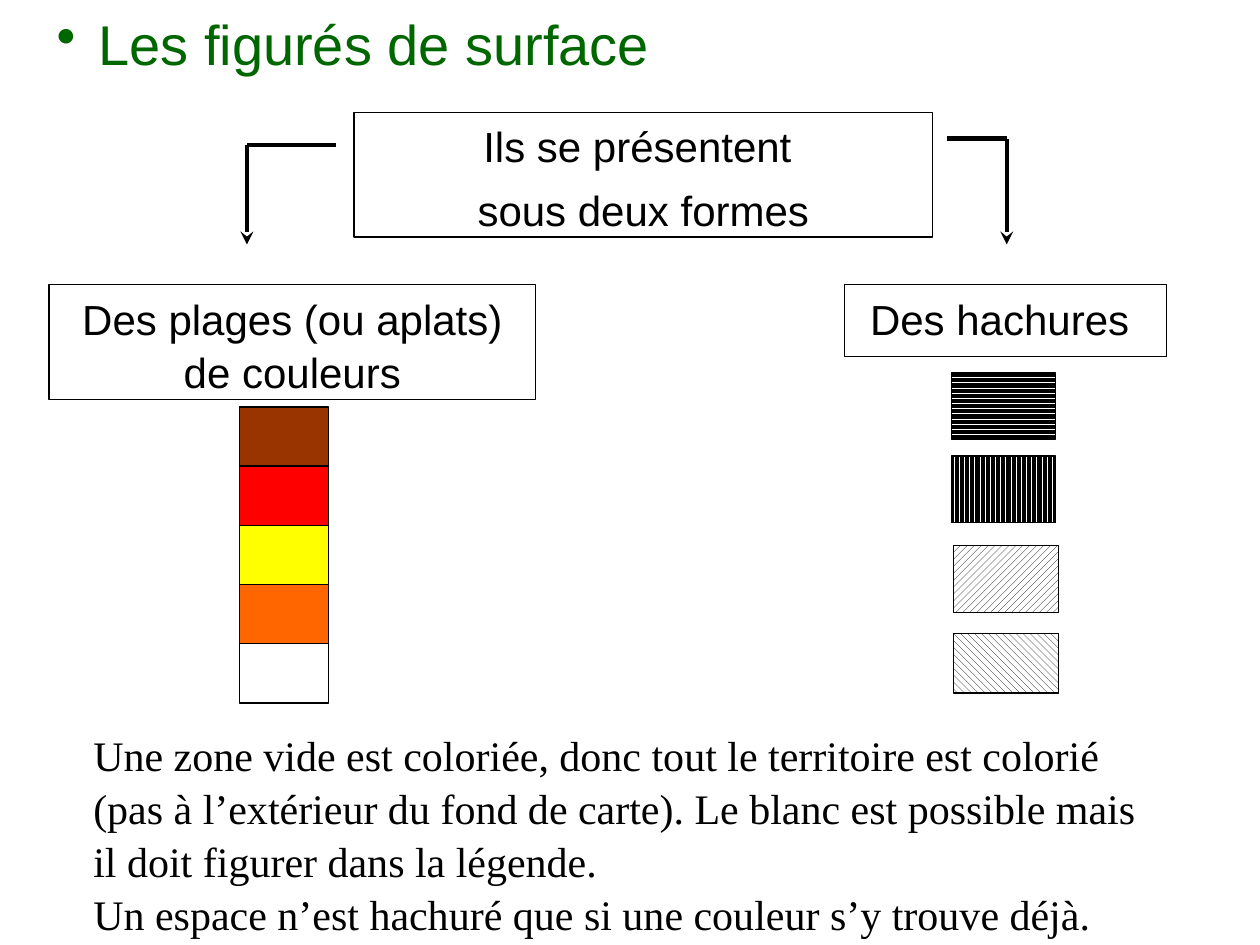
"""Builds the slide on area symbols, laid out on a grid of 100 columns by 75 rows."""
from lxml.etree import SubElement
from pptx import Presentation
from pptx.dml.color import RGBColor
from pptx.enum.dml import MSO_PATTERN
from pptx.enum.shapes import MSO_CONNECTOR, MSO_SHAPE
from pptx.enum.text import MSO_ANCHOR, MSO_AUTO_SIZE, PP_ALIGN
from pptx.oxml.ns import qn
from pptx.util import Inches, Pt

RECTANGLE, STRAIGHT = MSO_SHAPE.RECTANGLE, MSO_CONNECTOR.STRAIGHT
LEFT, CENTER = PP_ALIGN.LEFT, PP_ALIGN.CENTER
HORIZONTAL, VERTICAL = MSO_PATTERN.DARK_HORIZONTAL, MSO_PATTERN.DARK_VERTICAL
UPWARD, DOWNWARD = MSO_PATTERN.WIDE_UPWARD_DIAGONAL, MSO_PATTERN.WIDE_DOWNWARD_DIAGONAL
FRAME_FORMAT = {"word_wrap": True, "auto_size": MSO_AUTO_SIZE.NONE,
                "vertical_anchor": MSO_ANCHOR.TOP}

BLACK = RGBColor(0x00, 0x00, 0x00)
WHITE = RGBColor(0xFF, 0xFF, 0xFF)
GREEN = RGBColor(0x00, 0x66, 0x00)
BROWN = RGBColor(0x99, 0x33, 0x00)
RED = RGBColor(0xFF, 0x00, 0x00)
YELLOW = RGBColor(0xFF, 0xFF, 0x00)
ORANGE = RGBColor(0xFF, 0x66, 0x00)


def apply(target, values):
    for attribute, value in values.items():
        setattr(target, attribute, value)


class SlideBuilder:
    def __init__(self, deck):
        self.slide = deck.slides.add_slide(deck.slide_layouts[1])
        self.column = deck.slide_width / 100
        self.row = deck.slide_height / 75

    def area(self, *lengths):
        units = (self.column, self.row) * 2
        return [round(length * unit) for length, unit in zip(lengths, units)]

    def set_text(self, shape, lines, size=24, font="Arial", color=BLACK, align=LEFT, gap=0):
        frame = shape.text_frame
        apply(frame, FRAME_FORMAT)
        frame.text = "\n".join(lines)
        for index, paragraph in enumerate(frame.paragraphs):
            apply(paragraph, {"alignment": align, "line_spacing": 1.05,
                              "space_before": Pt(gap if index else 0)})
            for run in paragraph.runs:
                apply(run.font, {"size": Pt(size), "name": font})
                run.font.color.rgb = color

    def placeholder(self, index, box, lines, bullet=None, indent=0, **style):
        holder = self.slide.placeholders[index]
        apply(holder, dict(zip(("left", "top", "width", "height"), self.area(*box))))
        self.set_text(holder, lines, **style)
        for paragraph in holder.text_frame.paragraphs:
            properties = paragraph._p.get_or_add_pPr()
            properties.set("marL", str(Inches(indent)))
            properties.set("indent", str(-Inches(indent)))
            if bullet:
                SubElement(properties, qn("a:buChar")).set("char", bullet)
            else:
                SubElement(properties, qn("a:buNone"))

    def rectangle(self, box):
        shape = self.slide.shapes.add_shape(RECTANGLE, *self.area(*box))
        shape.shadow.inherit = False
        shape.fill.background()
        shape.line.color.rgb = BLACK
        shape.line.width = Pt(0.75)
        return shape

    def label(self, box, lines, gap=0):
        self.set_text(self.rectangle(box), lines, align=CENTER, gap=gap)

    def swatch(self, box, color):
        fill = self.rectangle(box).fill
        fill.solid()
        fill.fore_color.rgb = color

    def hatching(self, box, pattern):
        fill = self.rectangle(box).fill
        fill.patterned()
        fill.pattern = pattern
        fill.fore_color.rgb = BLACK
        fill.back_color.rgb = WHITE

    def line(self, start, end, arrow=False):
        connector = self.slide.shapes.add_connector(STRAIGHT, *self.area(*start, *end))
        connector.line.color.rgb = BLACK
        connector.line.width = Pt(2.5)
        properties = connector._element.spPr
        if arrow:
            SubElement(properties.find(qn("a:ln")), qn("a:tailEnd")).set("type", "stealth")
        SubElement(properties, qn("a:effectLst"))

    def elbow_arrow(self, start, corner, end):
        self.line(start, corner)
        self.line(corner, end, arrow=True)


def main():
    deck = Presentation()
    deck.slide_width, deck.slide_height = Inches(10), Inches(7.5)
    builder = SlideBuilder(deck)

    builder.placeholder(0, (3.5, 0, 50.8, 6.3), ["Les figurés de surface"],
                        bullet="•", indent=0.33, size=32, color=GREEN)
    builder.label((28.1, 8.9, 45.9, 9.9), ["Ils se présentent ", "sous deux formes"], gap=6)
    builder.elbow_arrow((26.7, 11.5), (19.6, 11.5), (19.6, 19.4))
    builder.elbow_arrow((75.2, 11), (79.9, 11), (79.9, 19.4))

    builder.label((3.9, 22.6, 38.6, 9.1), ["Des plages (ou aplats) de couleurs"])
    for step, color in enumerate((BROWN, RED, YELLOW, ORANGE, WHITE)):
        builder.swatch((19, 32.3 + 4.7 * step, 7.1, 4.7), color)

    builder.label((67, 22.6, 25.6, 5.7), ["Des hachures "])
    for left, top, height, pattern in ((75.5, 29.6, 5.3, HORIZONTAL),
                                       (75.5, 36.2, 5.3, VERTICAL),
                                       (75.7, 43.3, 5.3, UPWARD),
                                       (75.7, 50.3, 4.7, DOWNWARD)):
        builder.hatching((left, top, 8.3, height), pattern)

    builder.placeholder(1, (6.4, 57.2, 84.8, 17.2), [
        "Une zone vide est coloriée, donc tout le territoire est colorié "
        "(pas à l’extérieur du fond de carte). Le blanc est possible mais "
        "il doit figurer dans la légende.",
        "Un espace n’est hachuré que si une couleur s’y trouve déjà.",
    ], font="Times New Roman")
    deck.save("out.pptx")


if __name__ == "__main__":
    main()
